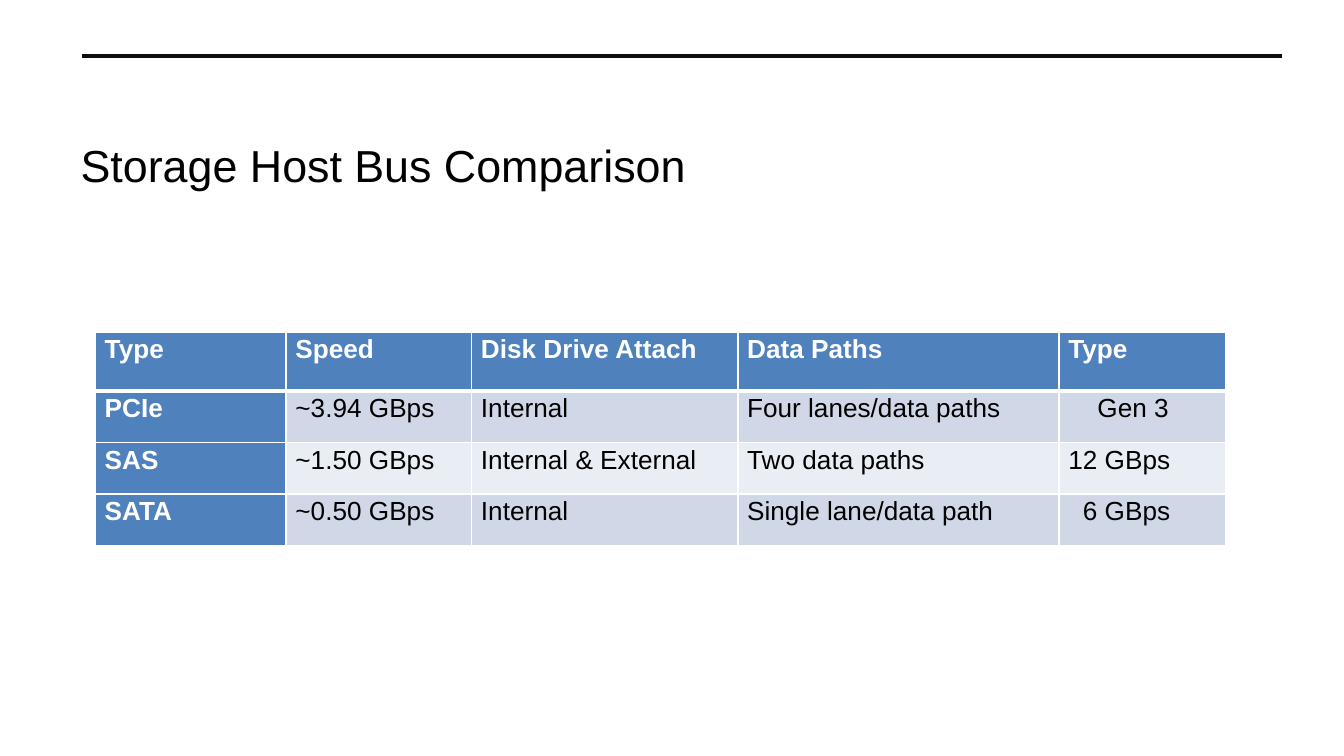
import lxml.etree
import pptx
import pptx.dml.color
import pptx.enum.shapes
import pptx.enum.text
import pptx.oxml.ns
import pptx.util

Pt = pptx.util.Pt
RGBColor = pptx.dml.color.RGBColor
qn = pptx.oxml.ns.qn

TITLE = "Storage Host Bus Comparison"
BUS_ROWS = [
    ("Type", "Speed", "Disk Drive Attach", "Data Paths", "Type"),
    ("PCIe", "~3.94 GBps", "Internal", "Four lanes/data paths", "Gen 3"),
    ("SAS", "~1.50 GBps", "Internal & External", "Two data paths", "12 GBps"),
    ("SATA", "~0.50 GBps", "Internal", "Single lane/data path", "6 GBps"),
]
INDENTS = {"Gen 3": 15.6, "6 GBps": 7.8}

BLACK = RGBColor(0x00, 0x00, 0x00)
WHITE = RGBColor(0xFF, 0xFF, 0xFF)
RULE_COLOR = RGBColor(0x0D, 0x0D, 0x0D)
HEADER_BLUE = RGBColor(0x4F, 0x81, 0xBD)
BANDS = [RGBColor(0xE9, 0xED, 0xF4), RGBColor(0xD0, 0xD8, 0xE8)]

COLUMN_WIDTHS = [102.2, 99.4, 142.6, 172.1, 89.3]
ROW_HEIGHTS = [31.7, 27.6, 27.6, 27.6]
TABLE_LEFT, TABLE_TOP = 51.1, 177.8

TITLE_BOX = {"left": Pt(36), "top": Pt(53.3), "width": Pt(648), "height": Pt(69.8)}
TITLE_FRAME = {
    "auto_size": pptx.enum.text.MSO_AUTO_SIZE.NONE,
    "vertical_anchor": pptx.enum.text.MSO_ANCHOR.MIDDLE,
    "word_wrap": True,
}
CELL_FORMAT = {
    "margin_left": Pt(5), "margin_right": Pt(5),
    "margin_top": 0, "margin_bottom": 0,
    "vertical_anchor": pptx.enum.text.MSO_ANCHOR.TOP,
}


def apply(target, values):
    for name, value in values.items():
        setattr(target, name, value)


def set_font(paragraph, size, color, bold=False):
    apply(paragraph.font, {"name": "Arial", "size": Pt(size), "bold": bold})
    paragraph.font.color.rgb = color


def set_borders(cell, widths):
    properties = cell._tc.get_or_add_tcPr()
    for side, width in widths.items():
        border = lxml.etree.SubElement(properties, qn(f"a:ln{side}"), w=str(Pt(width)))
        fill = lxml.etree.SubElement(border, qn("a:solidFill"))
        lxml.etree.SubElement(fill, qn("a:srgbClr"), val=str(WHITE))


def add_rule(slide):
    rule = slide.shapes.add_connector(
        pptx.enum.shapes.MSO_CONNECTOR.STRAIGHT, Pt(43.7), Pt(30.1), Pt(686.9), Pt(30.1))
    rule.line.color.rgb = RULE_COLOR
    rule.line.width = Pt(2)
    lxml.etree.SubElement(rule._element.spPr, qn("a:effectLst"))


def add_title(slide):
    title = slide.shapes.title
    apply(title, TITLE_BOX)
    apply(title.text_frame, TITLE_FRAME)
    title.text_frame.text = TITLE
    paragraph = title.text_frame.paragraphs[0]
    paragraph.alignment = pptx.enum.text.PP_ALIGN.LEFT
    set_font(paragraph, 24, BLACK)


def fill_cell(cell, text, row, column):
    is_header = row == 0
    is_heading = is_header or column == 0
    apply(cell, CELL_FORMAT)
    set_borders(cell, {"L": 1, "R": 1, "T": 3 if row == 1 else 1, "B": 3 if is_header else 1})
    cell.fill.solid()
    cell.fill.fore_color.rgb = HEADER_BLUE if is_heading else BANDS[row % 2]
    cell.text = text
    paragraph = cell.text_frame.paragraphs[0]
    paragraph.line_spacing = 1.1
    if is_header:
        paragraph.space_after = Pt(6)
    if text in INDENTS:
        paragraph._p.get_or_add_pPr().set("marL", str(Pt(INDENTS[text])))
    set_font(paragraph, 14, WHITE if is_heading else BLACK, is_heading)


def add_bus_table(slide):
    table = slide.shapes.add_table(
        len(BUS_ROWS), len(COLUMN_WIDTHS), Pt(TABLE_LEFT), Pt(TABLE_TOP),
        Pt(sum(COLUMN_WIDTHS)), Pt(sum(ROW_HEIGHTS))).table
    for column, width in zip(table.columns, COLUMN_WIDTHS):
        column.width = Pt(width)
    for row, height in zip(table.rows, ROW_HEIGHTS):
        row.height = Pt(height)
    for row, texts in enumerate(BUS_ROWS):
        for column, text in enumerate(texts):
            fill_cell(table.cell(row, column), text, row, column)


def main():
    deck = pptx.Presentation()
    apply(deck, {"slide_width": Pt(720), "slide_height": Pt(405)})
    slide = deck.slides.add_slide(deck.slide_layouts.get_by_name("Title Only"))
    add_rule(slide)
    add_title(slide)
    add_bus_table(slide)
    deck.save("out.pptx")


if __name__ == "__main__":
    main()
